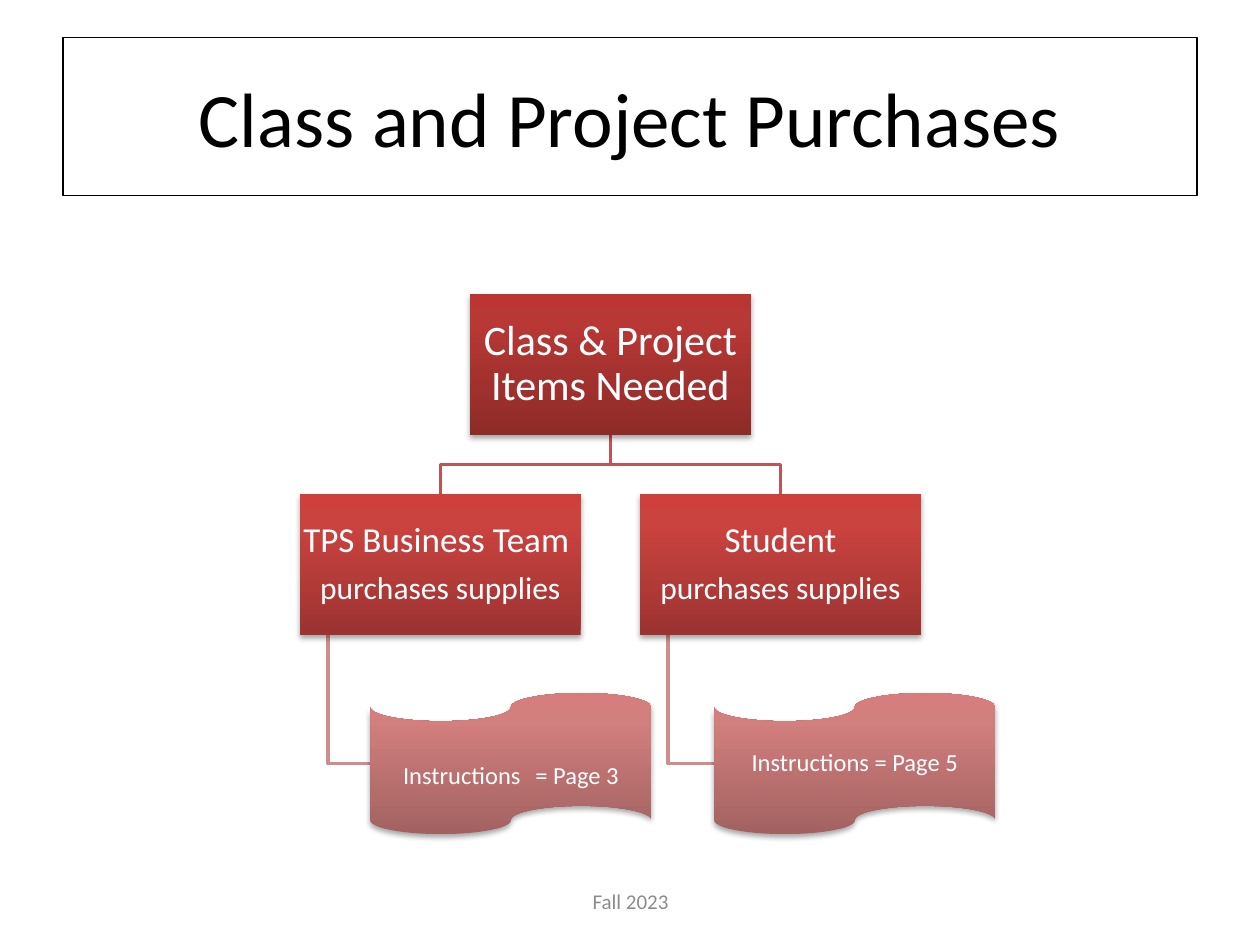
from copy import deepcopy

from lxml import etree
from pptx import Presentation
from pptx.dml.color import RGBColor
from pptx.enum.shapes import MSO_SHAPE
from pptx.enum.text import MSO_ANCHOR, PP_ALIGN
from pptx.oxml.ns import qn
from pptx.util import Inches, Pt

RECT, TAPE = MSO_SHAPE.RECTANGLE, MSO_SHAPE.FLOWCHART_PUNCHED_TAPE
MIDDLE, CENTER = MSO_ANCHOR.MIDDLE, PP_ALIGN.CENTER

BLACK = RGBColor(0x00, 0x00, 0x00)
WHITE = RGBColor(0xFF, 0xFF, 0xFF)
GRAY = RGBColor(0x8C, 0x8C, 0x8C)
BRANCH = RGBColor(0xC1, 0x54, 0x52)
LEAF = RGBColor(0xCF, 0x8D, 0x8C)
TOP_FILL = [RGBColor(0x8E, 0x2B, 0x28), RGBColor(0xB8, 0x38, 0x35), RGBColor(0xBB, 0x36, 0x32)]
MID_FILL = [RGBColor(0x9C, 0x33, 0x31), RGBColor(0xCB, 0x43, 0x3F), RGBColor(0xCF, 0x40, 0x3D)]
LOW_FILL = [RGBColor(0xA2, 0x62, 0x61), RGBColor(0xD2, 0x7F, 0x7E), RGBColor(0xD5, 0x7E, 0x7D)]
STOPS = [0, 0.8, 1]

BOX_W, BOX_H = 2.23, 1.12
TOP_Y, MID_Y, LOW_Y = 2.33, 3.92, 5.5
TOP_X = 3.73


def write(p, runs, color):
    p.alignment = CENTER
    for text, size in runs:
        r = p.add_run()
        r.text = text
        font = {"name": "Calibri", "size": Pt(size)}
        for name, value in font.items():
            setattr(r.font, name, value)
        r.font.color.rgb = color


def style_box(s, colors):
    s.fill.gradient()
    s.fill.gradient_angle = 90
    stops = s._element.spPr.find(".//" + qn("a:gsLst"))
    stops.insert(1, deepcopy(stops[0]))
    for stop, position, color in zip(s.fill.gradient_stops, STOPS, colors):
        stop.position = position
        stop.color.rgb = color
    s.line.fill.background()
    s.shadow.inherit = False
    effects = s._element.spPr.find(qn("a:effectLst"))
    shadow = etree.SubElement(effects, qn("a:outerShdw"), blurRad="40000", dist="23000",
                              dir="5400000", rotWithShape="0")
    black = etree.SubElement(shadow, qn("a:srgbClr"), val="000000")
    etree.SubElement(black, qn("a:alpha"), val="35000")


prs = Presentation()
prs.slide_width, prs.slide_height = Inches(10), Inches(7.5)
slide = prs.slides.add_slide(prs.slide_layouts[5])

title = slide.shapes.title
frame = {"left": 0.5, "top": 0.3, "width": 9, "height": 1.25}
for name, value in frame.items():
    setattr(title, name, Inches(value))
title.line.color.rgb = BLACK
title.line.width = Pt(0.75)
title.text_frame.vertical_anchor = MIDDLE
write(title.text_frame.paragraphs[0], [("Class and Project Purchases", 44)], BLACK)

trunk_x = TOP_X + BOX_W / 2
fork_y = (TOP_Y + BOX_H + MID_Y) / 2
lines = []
for mid_x, low_x in [(5.08, 5.67), (2.38, 2.94)]:
    drop_x, drop_y = mid_x + BOX_W / 10, LOW_Y + BOX_H / 2
    mid_center = mid_x + BOX_W / 2
    lines.append((LEAF, [(drop_x, MID_Y + BOX_H), (drop_x, drop_y), (low_x, drop_y)]))
    lines.append((BRANCH, [(trunk_x, TOP_Y + BOX_H), (trunk_x, fork_y),
                           (mid_center, fork_y), (mid_center, MID_Y)]))

for color, points in lines:
    start, *rest = [(Inches(x), Inches(y)) for x, y in points]
    builder = slide.shapes.build_freeform(*start)
    builder.add_line_segments(rest, close=False)
    s = builder.convert_to_shape()
    s.fill.background()
    s.line.color.rgb = color
    s.line.width = Pt(2)
    s.shadow.inherit = False

boxes = [
    (RECT, TOP_X, TOP_Y, TOP_FILL, [[("Class & Project Items Needed", 24)]]),
    (RECT, 2.38, MID_Y, MID_FILL, [[("TPS Business Team ", 20)], [("purchases supplies", 18)]]),
    (TAPE, 2.94, LOW_Y, LOW_FILL, [[("Instructions", 14), (" ", 37), ("= Page 3", 14)]]),
    (RECT, 5.08, MID_Y, MID_FILL, [[("Student", 20)], [("purchases supplies", 18)]]),
    (TAPE, 5.67, LOW_Y, LOW_FILL, [[("Instructions = Page 5", 14)]]),
]
for kind, x, y, colors, paragraphs in boxes:
    s = slide.shapes.add_shape(kind, Inches(x), Inches(y), Inches(BOX_W), Inches(BOX_H))
    style_box(s, colors)
    tf = s.text_frame
    tf.word_wrap = True
    tf.vertical_anchor = MIDDLE
    for side in ("left", "top", "right", "bottom"):
        setattr(tf, f"margin_{side}", Inches(0.01))
    for i, runs in enumerate(paragraphs):
        p = tf.add_paragraph() if i else tf.paragraphs[0]
        p.line_spacing = 0.9
        p.space_after = Pt(0.35 * runs[0][1])
        write(p, runs, WHITE)

footer = slide.shapes.add_textbox(Inches(3.42), Inches(6.95), Inches(3.17), Inches(0.4))
tf = footer.text_frame
tf.word_wrap = True
tf.vertical_anchor = MIDDLE
write(tf.paragraphs[0], [("Fall 2023", 12)], GRAY)

prs.save("out.pptx")
